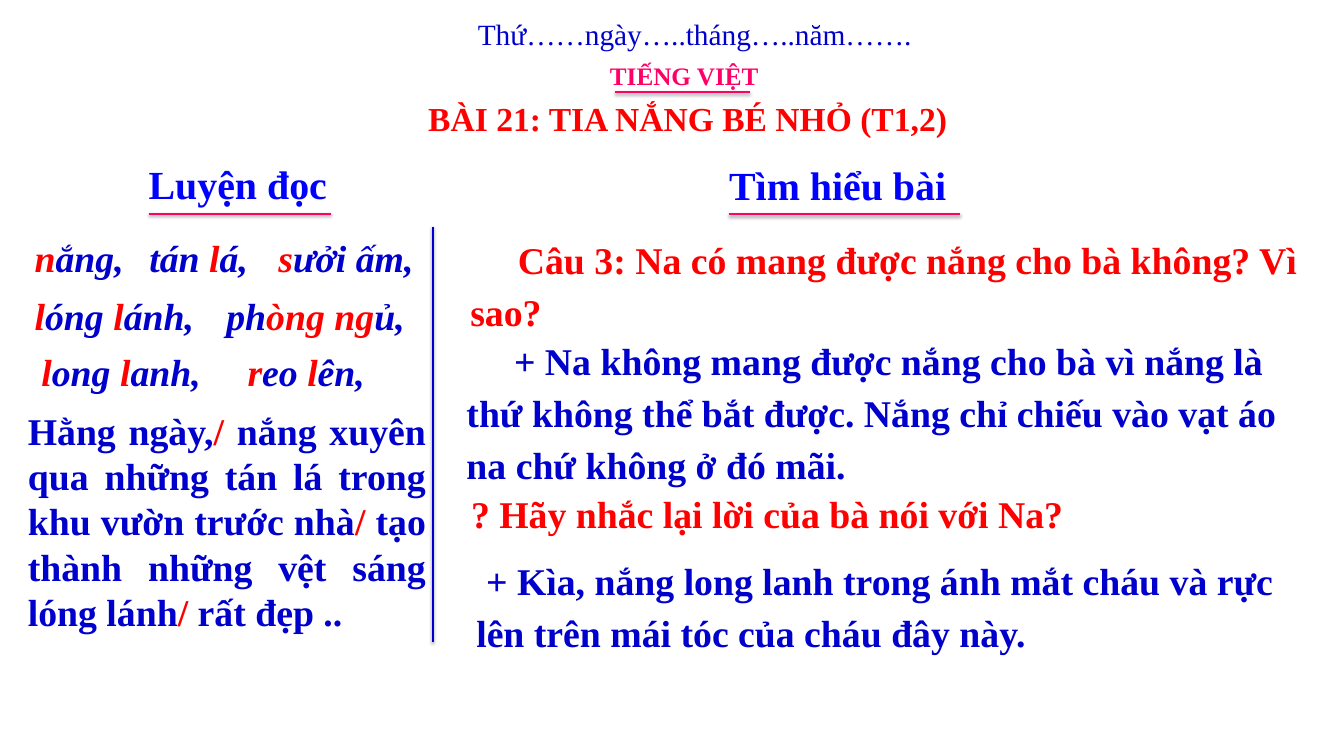
from dataclasses import dataclass

from lxml import etree
from pptx import Presentation
from pptx.dml.color import RGBColor
from pptx.enum.shapes import MSO_CONNECTOR
from pptx.enum.text import MSO_AUTO_SIZE, PP_ALIGN
from pptx.oxml.ns import qn
from pptx.util import Inches, Pt

LEFT, CENTER, JUSTIFY = PP_ALIGN.LEFT, PP_ALIGN.CENTER, PP_ALIGN.JUSTIFY
STRAIGHT = MSO_CONNECTOR.STRAIGHT
GROW = MSO_AUTO_SIZE.SHAPE_TO_FIT_TEXT


@dataclass(frozen=True)
class Theme:
    font: str = "Times New Roman"
    blue: RGBColor = RGBColor(0x00, 0x00, 0xCC)
    bright_blue: RGBColor = RGBColor(0x00, 0x00, 0xFF)
    red: RGBColor = RGBColor(0xFF, 0x00, 0x00)
    pink: RGBColor = RGBColor(0xFF, 0x00, 0x66)
    subject_size: int = 24
    date_size: int = 28
    title_size: int = 32
    body_size: int = 36
    heading_size: int = 38
    line_width: int = 2


class LessonSlide:
    def __init__(self, slide, theme):
        self.slide = slide
        self.theme = theme

    def text(self, box, content, color, size, bold=True, italic=False, align=LEFT,
             spacing=None, indent=0, insets=(0.1, 0.05), wrap=True):
        """Add a text box; parts between bars in the content are red."""
        shape = self.slide.shapes.add_textbox(*map(Inches, box))
        frame = shape.text_frame
        frame.word_wrap = wrap
        frame.auto_size = GROW
        frame.margin_left = frame.margin_right = Inches(insets[0])
        frame.margin_top = frame.margin_bottom = Inches(insets[1])
        paragraph = frame.paragraphs[0]
        paragraph.alignment = align
        if spacing:
            paragraph.line_spacing = spacing
        if indent:
            properties = paragraph._p.get_or_add_pPr()
            properties.set("marL", "0")
            properties.set("indent", str(Inches(indent)))
        font = paragraph.font
        font.name, font.size = self.theme.font, Pt(size)
        font.bold, font.italic = bold, italic
        font.color.rgb = color
        for index, part in enumerate(content.split("|")):
            if part:
                run = paragraph.add_run()
                run.text = part
                if index % 2:
                    run.font.color.rgb = self.theme.red

    def heading(self, box, content):
        self.text(box, content, self.theme.bright_blue, self.theme.heading_size,
                  align=CENTER, insets=(0.08, 0.04), wrap=False)

    def reading(self, box, content, italic=True):
        self.text(box, content, self.theme.blue, self.theme.body_size,
                  italic=italic, align=JUSTIFY)

    def discussion(self, box, content, color, indent=0):
        self.text(box, content, color, self.theme.body_size, spacing=1.15, indent=indent)

    def line(self, start, end, color):
        """Add a straight line with a soft shadow below it."""
        connector = self.slide.shapes.add_connector(
            STRAIGHT, *map(Inches, (*start, *end)))
        connector.line.color.rgb = color
        connector.line.width = Pt(self.theme.line_width)
        effects = etree.SubElement(connector._element.spPr, qn("a:effectLst"))
        shadow = etree.SubElement(
            effects, qn("a:outerShdw"), blurRad=str(Pt(3.1)), dist=str(Pt(1.6)),
            dir="5400000", rotWithShape="0")
        black = etree.SubElement(shadow, qn("a:srgbClr"), val="000000")
        etree.SubElement(black, qn("a:alpha"), val="38000")


def main():
    presentation = Presentation()
    presentation.slide_width = Inches(17.8)
    presentation.slide_height = Inches(10)
    theme = Theme()
    lesson = LessonSlide(
        presentation.slides.add_slide(presentation.slide_layouts[6]), theme)

    lesson.text((6.23, 0.16, 6.01, 0.57), "Thứ……ngày…..tháng…..năm…….",
                theme.blue, theme.date_size, bold=False)
    lesson.text((7.98, 0.75, 2.19, 0.5), "TIẾNG VIỆT", theme.pink, theme.subject_size)
    lesson.line((8.14, 1.22), (9.93, 1.22), theme.pink)
    lesson.text((5.32, 1.22, 7.58, 0.7), "BÀI 21: TIA NẮNG BÉ NHỎ (T1,2)",
                theme.red, theme.title_size, align=CENTER, insets=(0.16, 0.08))

    lesson.heading((1.88, 2.07, 2.54, 0.72), "Luyện đọc")
    lesson.line((1.97, 2.83), (4.38, 2.83), theme.pink)
    lesson.heading((9.57, 2.09, 3.05, 0.72), "Tìm hiểu bài")
    lesson.line((9.65, 2.84), (12.72, 2.84), theme.pink)
    lesson.line((5.73, 3), (5.73, 8.5), theme.blue)

    word_rows = [
        (3.06, [(0.36, 1.52, "|n|ắng,"), (1.88, 1.69, "tán |l|á,"),
                (3.59, 2.14, "|s|ưởi ấm,")]),
        (3.83, [(0.36, 2.73, "|l|óng |l|ánh,"), (2.9, 2.97, "ph|òng ng|ủ,")]),
        (4.57, [(0.45, 2.57, "|l|ong |l|anh,"), (3.18, 1.9, "|r|eo |l|ên,")]),
    ]
    for top, words in word_rows:
        for left, width, word in words:
            lesson.reading((left, top, width, 0.71), word)
    lesson.reading(
        (0.27, 5.35, 5.47, 3.13),
        "Hằng ngày,|/| nắng xuyên qua những tán lá trong khu vườn trước nhà|/| tạo "
        "thành những vệt sáng lóng lánh|/ |rất đẹp ..", italic=False)

    lesson.discussion((6.13, 3, 11.19, 1.44),
                      "Câu 3: Na có mang được nắng cho bà không? Vì sao?",
                      theme.red, indent=0.63)
    lesson.discussion((6.08, 4.33, 11.17, 2.19),
                      "+ Na không mang được nắng cho bà vì nắng là thứ không thể bắt "
                      "được. Nắng chỉ chiếu vào vạt áo na chứ không ở đó mãi.",
                      theme.blue, indent=0.63)
    lesson.discussion((6.14, 6.36, 11.17, 0.74),
                      "? Hãy nhắc lại lời của bà nói với Na?", theme.red)
    lesson.discussion((6.21, 7.25, 10.92, 1.49),
                      "+ Kìa, nắng long lanh trong ánh mắt cháu và rực lên trên mái "
                      "tóc của cháu đây này.", theme.blue, indent=0.13)

    presentation.save("out.pptx")


if __name__ == "__main__":
    main()
